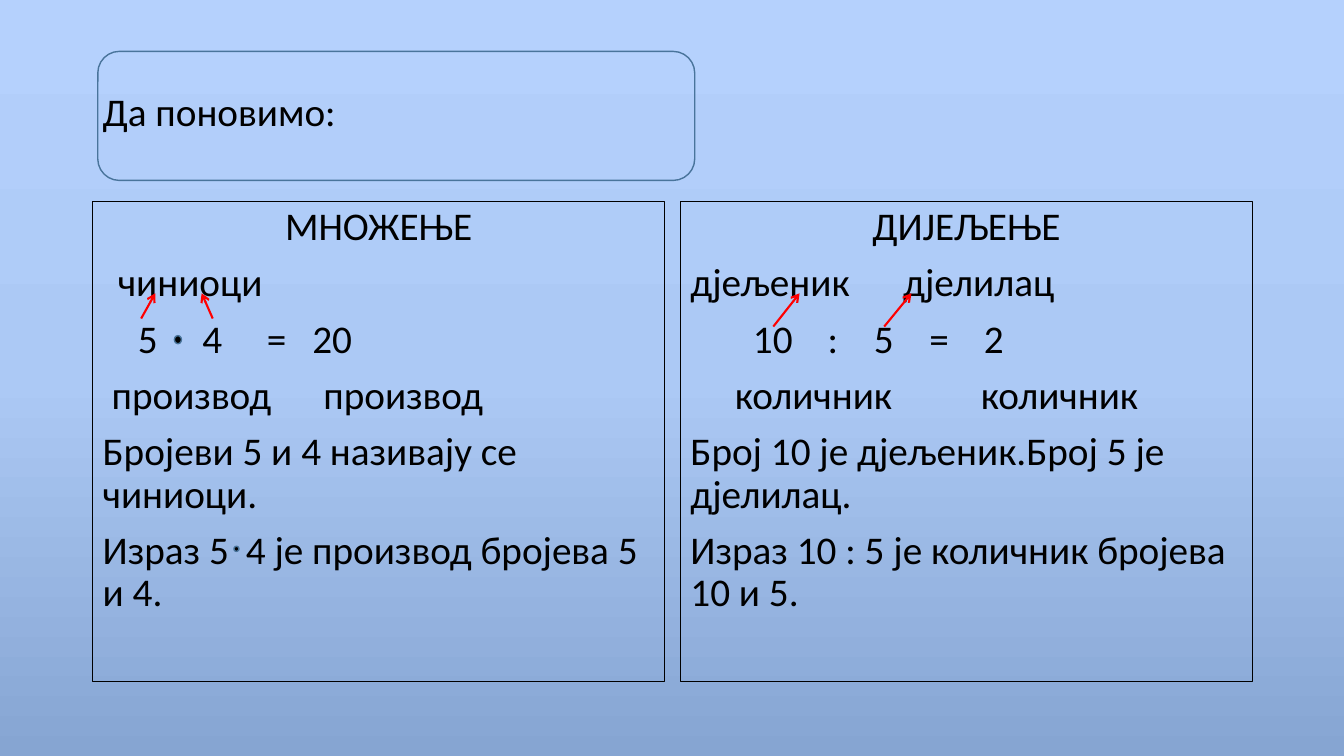
from copy import deepcopy
from dataclasses import dataclass

from lxml import etree
from pptx import Presentation
from pptx import util as u
from pptx.dml.color import RGBColor
from pptx.enum import shapes, text
from pptx.oxml.ns import qn

SCALE = 9144  # EMU in one px, 100 px to the inch


def px(n):
    return u.Emu(n * SCALE)


@dataclass(frozen=True)
class Theme:
    font: str = "Calibri"
    size: int = 28
    ink: str = "000000"
    red: str = "FF0000"
    edge: str = "49749B"
    sky: tuple = ("B5D1FD", "ACC9F5", "86A5D2")


def write(para, words, font, size, color, align=text.PP_ALIGN.LEFT, before=0, tabs=()):
    """Fill one paragraph; tabs are stops in px from the text edge."""
    para.alignment = align
    para.line_spacing = 0.9
    para.space_before = u.Pt(before)
    run = para.add_run()
    run.text = words
    run.font.name = font
    run.font.size = u.Pt(size)
    run.font.color.rgb = RGBColor.from_string(color)
    if tabs:
        stops = etree.SubElement(para._p.get_or_add_pPr(), qn("a:tabLst"))
        for stop in tabs:
            etree.SubElement(stops, qn("a:tab"), pos=str(px(stop)), algn="l")


class Page:
    def __init__(self, deck, theme):
        self.theme = theme
        self.slide = deck.slides.add_slide(deck.slide_layouts[6])
        self.items = self.slide.shapes

    def sky(self):
        fill = self.slide.background.fill
        fill.gradient()
        fill.gradient_angle = 270
        stops = self.slide.element.find(".//" + qn("a:gsLst"))
        stops.insert(1, deepcopy(stops[0]))
        for i, (stop, color) in enumerate(zip(fill.gradient_stops, self.theme.sky)):
            stop.position = i / 2
            stop.color.rgb = RGBColor.from_string(color)

    def shape(self, kind, box, line, width=1, fill=None):
        item = self.items.add_shape(kind, *map(px, box))
        item.shadow.inherit = False
        item.line.color.rgb = RGBColor.from_string(line)
        item.line.width = u.Pt(width)
        if fill:
            item.fill.solid()
            item.fill.fore_color.rgb = RGBColor.from_string(fill)
        else:
            item.fill.background()
        return item

    def fill_in(self, item, rows, anchor, before=0):
        frame = item.text_frame
        frame.word_wrap = True
        frame.vertical_anchor = anchor
        for i, (words, opts) in enumerate(rows):
            para = frame.add_paragraph() if i else frame.paragraphs[0]
            write(para, words, self.theme.font, self.theme.size, self.theme.ink,
                  before=before, **opts)

    def title(self, box, words):
        item = self.items.add_textbox(*map(px, box))
        self.fill_in(item, [(words, {})], text.MSO_ANCHOR.MIDDLE)

    def panel(self, box, rows):
        item = self.shape(shapes.MSO_SHAPE.RECTANGLE, box, self.theme.ink, 0.75)
        self.fill_in(item, rows, text.MSO_ANCHOR.TOP, before=10)

    def arrow(self, *ends):
        item = self.items.add_connector(shapes.MSO_CONNECTOR.STRAIGHT, *map(px, ends))
        item.line.color.rgb = RGBColor.from_string(self.theme.red)
        item.line.width = u.Pt(1.5)
        etree.SubElement(item.line._get_or_add_ln(), qn("a:tailEnd"), type="arrow")
        etree.SubElement(item._element.spPr, qn("a:effectLst"))

    def dot(self, *box):
        self.shape(shapes.MSO_SHAPE.FLOWCHART_CONNECTOR, box, self.theme.edge,
                   fill=self.theme.ink)


def main():
    deck = Presentation()
    deck.slide_width, deck.slide_height = px(1333), px(750)
    page = Page(deck, Theme())
    page.sky()

    # Title
    page.title((92, 40, 1150, 145), "Да поновимо:")

    # Two panels side by side
    head = {"align": text.PP_ALIGN.CENTER}
    times = [
        ("МНОЖЕЊЕ", head),
        ("\tчиниоци", {"tabs": (15,)}),
        ("\t5\t4\t=\t20", {"tabs": (35, 99, 163, 208)}),
        ("\tпроизвод\tпроизвод", {"tabs": (9, 219)}),
        ("Бројеви 5 и 4 називају се чиниоци.", {}),
        ("Израз 5\t4 је производ бројева 5 и 4.", {"tabs": (142,)}),
    ]
    parts = [
        ("ДИЈЕЉЕЊЕ", head),
        ("дјељеник\tдјелилац", {"tabs": (211,)}),
        ("\t10\t:\t5\t=\t2", {"tabs": (62, 136, 182, 237, 291)}),
        ("\tколичник\tколичник", {"tabs": (44, 288)}),
        ("Број 10 је дјељеник.Број 5 је дјелилац.", {}),
        ("Израз 10 : 5 је количник бројева 10 и 5.", {}),
    ]
    for i, rows in enumerate((times, parts)):
        page.panel((92 + 583 * i, 200, 567, 476), rows)

    # Arrows from numbers to their names
    for x, y, tip in ((140, 316, 154), (211, 316, 200), (767, 324, 793), (877, 324, 904)):
        page.arrow(x, y, tip, 291)

    # Title frame and multiplication dots
    page.shape(shapes.MSO_SHAPE.ROUNDED_RECTANGLE, (97, 51, 592, 128), page.theme.edge)
    page.dot(173, 333, 7, 8)
    page.dot(232, 542, 5, 5)

    deck.save("out.pptx")


if __name__ == "__main__":
    main()
